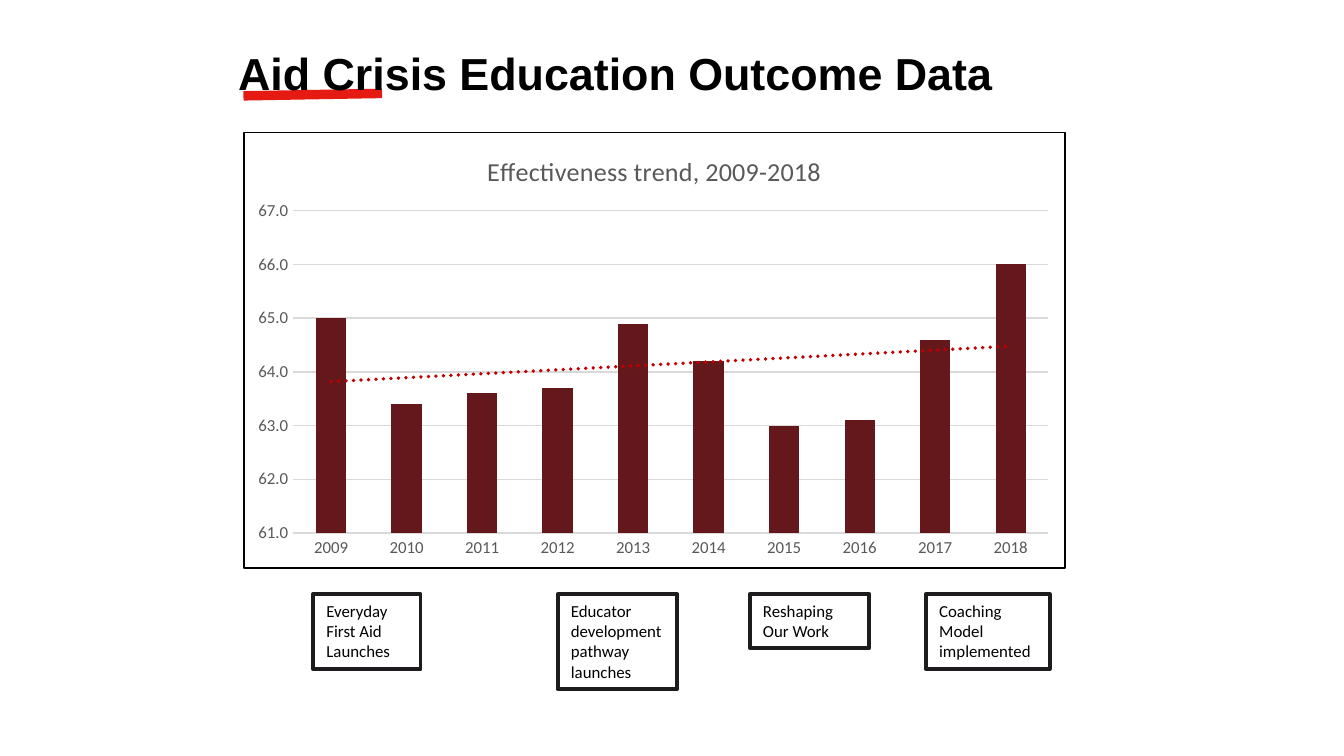
from dataclasses import dataclass

from pptx import Presentation
from pptx.chart.data import CategoryChartData as Data
from pptx.dml.color import RGBColor as Rgb
from pptx.enum.chart import XL_CHART_TYPE as Kind, XL_TICK_MARK as Tick
from pptx.enum.shapes import MSO_SHAPE as Form
from pptx.enum.text import MSO_ANCHOR as Anchor, MSO_AUTO_SIZE as Fit, PP_ALIGN as Align
from pptx.oxml import parse_xml as to_xml
from pptx.oxml.ns import nsdecls
from pptx.util import Cm, Pt


@dataclass(frozen=True)
class Theme:
    black: str = "000000"
    white: str = "FFFFFF"
    red: str = "E51A13"
    trend: str = "C00000"
    bar: str = "65181B"
    edge: str = "1D1B1D"
    gray: str = "595959"
    grid: str = "D9D9D9"
    head: str = "Arial"
    body: str = "Calibri"
    big: int = 24
    mid: int = 14
    base: int = 10
    small: int = 9


@dataclass(frozen=True)
class Note:
    text: str
    left: float
    width: float
    height: float


THEME = Theme()
NOTE_TOP = 11.23
NOTES = [
    Note("Everyday First Aid Launches", 5.92, 2.03, 1.42),
    Note("Educator development pathway launches", 10.54, 2.26, 1.8),
    Note("Reshaping Our Work", 14.17, 2.26, 1.02),
    Note("Coaching Model implemented", 17.5, 2.34, 1.42),
]
SCORES = [65.0, 63.4, 63.6, 63.7, 64.9, 64.2, 63.0, 63.1, 64.6, 66.0]
YEARS = [str(2009 + step) for step in range(len(SCORES))]


def set_font(font, size: int, tint: str, face: str = THEME.body, bold: bool = False) -> None:
    font.name, font.size, font.bold = face, Pt(size), bold
    font.color.rgb = Rgb.from_string(tint)


def set_fill(fill, tint: str) -> None:
    fill.solid()
    fill.fore_color.rgb = Rgb.from_string(tint)


def set_line(line, tint: str, width: float) -> None:
    line.color.rgb = Rgb.from_string(tint)
    line.width = Pt(width)


def add_mark(slide) -> None:
    mark = slide.shapes.add_shape(Form.RECTANGLE, Cm(5.82), Cm(0.48), Cm(0.18), Cm(2.62))
    mark.rotation = 89
    mark.shadow.inherit = False
    set_fill(mark.fill, THEME.red)
    mark.line.fill.background()


def add_title(slide) -> None:
    frame = slide.shapes.add_textbox(Cm(4.4), Cm(0.77), Cm(16.41), Cm(1.24)).text_frame
    frame.word_wrap = True
    frame.auto_size = Fit.SHAPE_TO_FIT_TEXT
    frame.margin_left = frame.margin_right = Cm(0.1)
    frame.margin_top = frame.margin_bottom = Cm(0.1)
    frame.text = "Aid Crisis Education Outcome Data"
    set_font(frame.paragraphs[0].font, THEME.big, THEME.black, THEME.head, True)


def add_note(slide, note: Note) -> None:
    box = slide.shapes.add_shape(
        Form.RECTANGLE, Cm(note.left), Cm(NOTE_TOP), Cm(note.width), Cm(note.height))
    box.shadow.inherit = False
    set_fill(box.fill, THEME.white)
    set_line(box.line, THEME.edge, 2)
    frame = box.text_frame
    frame.word_wrap = True
    frame.auto_size = Fit.SHAPE_TO_FIT_TEXT
    frame.vertical_anchor = Anchor.TOP
    frame.text = note.text
    line = frame.paragraphs[0]
    line.alignment = Align.LEFT
    set_font(line.font, THEME.small, THEME.black)


def add_trend(chart) -> None:
    chart.element.xpath(".//c:ser/c:cat")[0].addprevious(to_xml(
        f'<c:trendline {nsdecls("c", "a")}><c:spPr><a:ln w="{Pt(2)}" cap="rnd">'
        f'<a:solidFill><a:srgbClr val="{THEME.trend}"/></a:solidFill>'
        '<a:prstDash val="sysDot"/></a:ln></c:spPr><c:trendlineType val="linear"/>'
        '<c:dispRSqr val="0"/><c:dispEq val="0"/></c:trendline>'))


def add_frame(chart) -> None:
    chart.element.xpath("c:chart")[0].addnext(to_xml(
        f'<c:spPr {nsdecls("c", "a")}><a:solidFill><a:srgbClr val="{THEME.white}"/>'
        f'</a:solidFill><a:ln w="{Pt(0.75)}"><a:solidFill>'
        f'<a:srgbClr val="{THEME.black}"/></a:solidFill></a:ln></c:spPr>'))


def set_plot(chart, left: float, top: float, width: float, height: float) -> None:
    area = chart.element.xpath(".//c:plotArea")[0]
    for old in area.xpath("c:layout"):
        area.remove(old)
    sides = {"x": left, "y": top, "w": width, "h": height}
    spots = "".join(f'<c:{key} val="{part}"/>' for key, part in sides.items())
    area.insert(0, to_xml(
        f'<c:layout {nsdecls("c")}><c:manualLayout><c:layoutTarget val="inner"/>'
        f'<c:xMode val="edge"/><c:yMode val="edge"/>{spots}</c:manualLayout></c:layout>'))


def add_graph(slide) -> None:
    data = Data(number_format="0.0")
    data.categories = YEARS
    data.add_series("Series 1", SCORES)
    chart = slide.shapes.add_chart(
        Kind.COLUMN_CLUSTERED, Cm(4.6), Cm(2.49), Cm(15.54), Cm(8.26), data).chart
    set_font(chart.font, THEME.base, THEME.black)
    chart.has_legend = False
    chart.has_title = True
    title = chart.chart_title.text_frame
    title.text = "Effectiveness trend, 2009-2018"
    set_font(title.paragraphs[0].font, THEME.mid, THEME.gray)

    plot = chart.plots[0]
    plot.gap_width = 150
    plot.vary_by_categories = False
    set_fill(plot.series[0].format.fill, THEME.bar)

    for axis in (chart.category_axis, chart.value_axis):
        axis.major_tick_mark = axis.minor_tick_mark = Tick.NONE
        set_font(axis.tick_labels.font, THEME.small, THEME.gray)
    set_line(chart.category_axis.format.line, THEME.grid, 0.75)
    scale = chart.value_axis
    scale.minimum_scale, scale.maximum_scale, scale.major_unit = 61, 67, 1
    scale.format.line.fill.background()
    scale.has_major_gridlines = True
    set_line(scale.major_gridlines.format.line, THEME.grid, 0.75)
    scale.tick_labels.number_format = "0.0"
    scale.tick_labels.number_format_is_linked = False

    add_trend(chart)
    add_frame(chart)
    set_plot(chart, 0.06, 0.18, 0.92, 0.74)


def main() -> None:
    deck = Presentation()
    deck.slide_width, deck.slide_height = Cm(25.4), Cm(14.29)
    slide = deck.slides.add_slide(deck.slide_layouts[6])
    add_mark(slide)
    add_title(slide)
    add_graph(slide)
    for note in NOTES:
        add_note(slide, note)
    deck.save("out.pptx")


if __name__ == "__main__":
    main()
